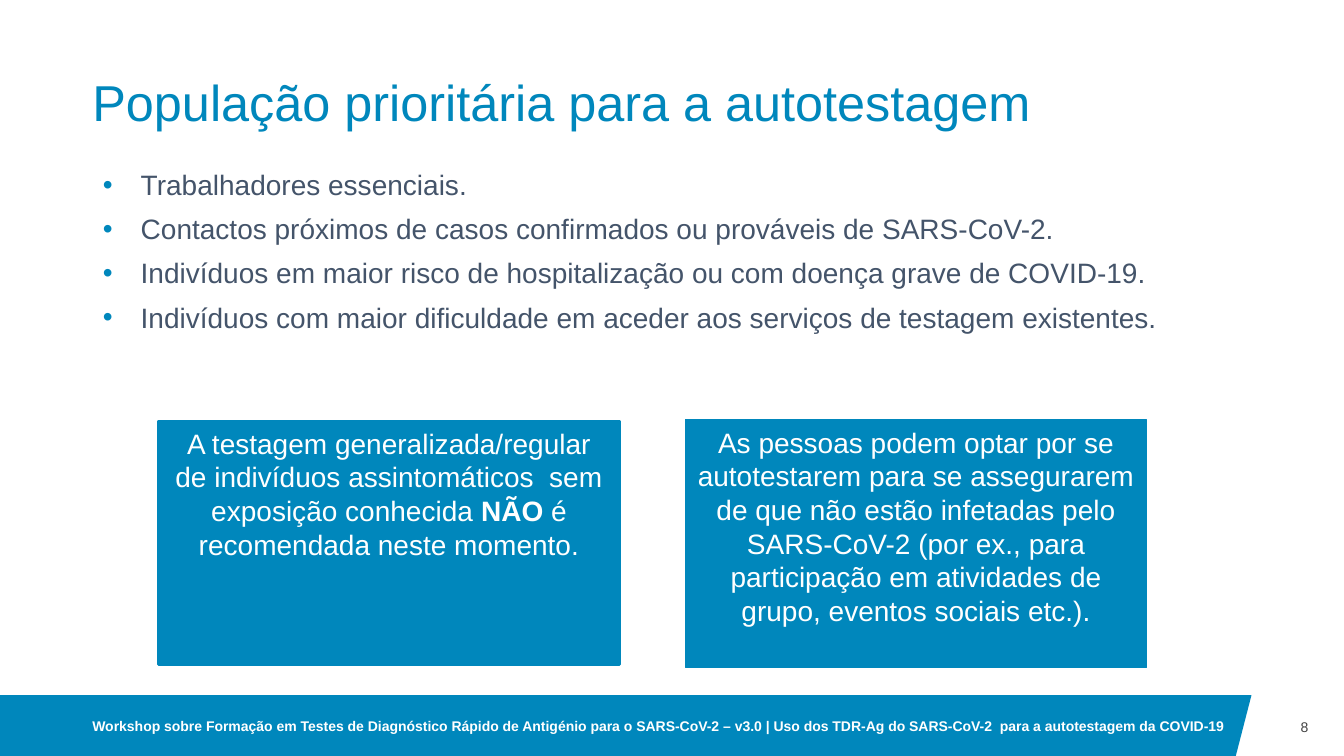
from lxml.etree import SubElement
from pptx import Presentation
from pptx.dml.color import RGBColor
from pptx.enum.shapes import MSO_SHAPE
from pptx.enum.text import MSO_ANCHOR, MSO_AUTO_SIZE, PP_ALIGN
from pptx.oxml.ns import qn
from pptx.util import Pt

EMU_PER_PX = 9525
FONT = "Arial"
COLORS = {"blue": "0087BC", "slate": "44546A", "gray": "424242", "white": "FFFFFF"}

TITLE = "População prioritária para a autotestagem"
GROUPS = [
    "Trabalhadores essenciais.",
    "Contactos próximos de casos confirmados ou prováveis de SARS-CoV-2.",
    "Indivíduos em maior risco de hospitalização ou com doença grave de COVID-19.",
    "Indivíduos com maior dificuldade em aceder aos serviços de testagem existentes.",
]
NOT_RECOMMENDED = [
    ("A testagem generalizada/regular de indivíduos assintomáticos  sem exposição conhecida ", False),
    ("NÃO", True),
    (" é recomendada neste momento.", False),
]
PERSONAL_CHOICE = [
    ("As pessoas podem optar por se autotestarem para se assegurarem de que não estão "
     "infetadas pelo SARS-CoV-2 (por ex., para participação em atividades de grupo, "
     "eventos sociais etc.).", False),
]
FOOTER = ("Workshop sobre Formação em Testes de Diagnóstico Rápido de Antigénio para o "
          "SARS-CoV-2 – v3.0 | Uso dos TDR-Ag do SARS-CoV-2  para a autotestagem da COVID-19")


def px(value):
    return value * EMU_PER_PX


def color(name):
    return RGBColor.from_string(COLORS[name])


def place(shape, left, top, width, height):
    shape.left, shape.top = px(left), px(top)
    shape.width, shape.height = px(width), px(height)


def set_frame(shape, anchor, inset_x=0, inset_y=0):
    frame = shape.text_frame
    frame.word_wrap = True
    frame.auto_size = MSO_AUTO_SIZE.NONE
    frame.vertical_anchor = anchor
    frame.margin_left = frame.margin_right = px(inset_x)
    frame.margin_top = frame.margin_bottom = px(inset_y)
    return frame


def add_run(paragraph, text, size, color_name, bold=False):
    run = paragraph.add_run()
    run.text = text
    run.font.name = FONT
    run.font.size = Pt(size)
    run.font.bold = bold
    run.font.color.rgb = color(color_name)


def paint(shape, line_width):
    shape.shadow.inherit = False
    shape.fill.solid()
    shape.fill.fore_color.rgb = color("blue")
    if line_width:
        shape.line.color.rgb = color("blue")
        shape.line.width = Pt(line_width)
    else:
        shape.line.fill.background()


def add_footer_band(slide):
    builder = slide.shapes.build_freeform(0, px(662))
    builder.add_line_segments([(px(1192), px(662)), (px(1177), px(720)), (0, px(720))])
    paint(builder.convert_to_shape(), 0)


def fill_title(slide):
    title = slide.shapes.title
    place(title, 88, 27, 1104, 99)
    paragraph = set_frame(title, MSO_ANCHOR.BOTTOM).paragraphs[0]
    paragraph.alignment = PP_ALIGN.LEFT
    paragraph.line_spacing = 0.9
    add_run(paragraph, TITLE, 36, "blue")


def set_bullet(paragraph):
    properties = paragraph._p.get_or_add_pPr()
    properties.set("marL", str(px(36)))
    properties.set("indent", str(px(-36)))
    bullet_color = SubElement(properties, qn("a:buClr"))
    SubElement(bullet_color, qn("a:srgbClr")).set("val", COLORS["blue"])
    SubElement(properties, qn("a:buFont")).set("typeface", FONT)
    SubElement(properties, qn("a:buChar")).set("char", "•")


def fill_list(slide):
    body = slide.placeholders[1]
    place(body, 88, 158, 1104, 467)
    frame = set_frame(body, MSO_ANCHOR.TOP, 10, 5)
    for index, group in enumerate(GROUPS):
        paragraph = frame.add_paragraph() if index else frame.paragraphs[0]
        paragraph.line_spacing = 0.9
        paragraph.space_before = Pt(10)
        set_bullet(paragraph)
        add_run(paragraph, group, 20, "slate")


def add_callout(slide, left, top, width, height, line_width, runs):
    box = slide.shapes.add_shape(MSO_SHAPE.RECTANGLE, px(left), px(top), px(width), px(height))
    paint(box, line_width)
    paragraph = set_frame(box, MSO_ANCHOR.TOP, 10, 5).paragraphs[0]
    paragraph.alignment = PP_ALIGN.CENTER
    for text, bold in runs:
        add_run(paragraph, text, 20, "white", bold)


def add_label(slide, left, top, width, height, text, color_name, alignment, bold=False):
    label = slide.shapes.add_textbox(px(left), px(top), px(width), px(height))
    paragraph = set_frame(label, MSO_ANCHOR.MIDDLE).paragraphs[0]
    paragraph.alignment = alignment
    add_run(paragraph, text, 10, color_name, bold)


def main():
    presentation = Presentation()
    presentation.slide_width, presentation.slide_height = px(1280), px(720)
    slide = presentation.slides.add_slide(presentation.slide_layouts[1])
    add_footer_band(slide)
    fill_title(slide)
    fill_list(slide)
    add_label(slide, 1192, 662, 54, 60, "8", "gray", PP_ALIGN.RIGHT)
    add_callout(slide, 151, 401, 439, 232, 2, NOT_RECOMMENDED)
    add_callout(slide, 653, 400, 439, 236, 0.75, PERSONAL_CHOICE)
    add_label(slide, 88, 665, 1086, 53, FOOTER, "white", PP_ALIGN.LEFT, True)
    presentation.save("out.pptx")


if __name__ == "__main__":
    main()
